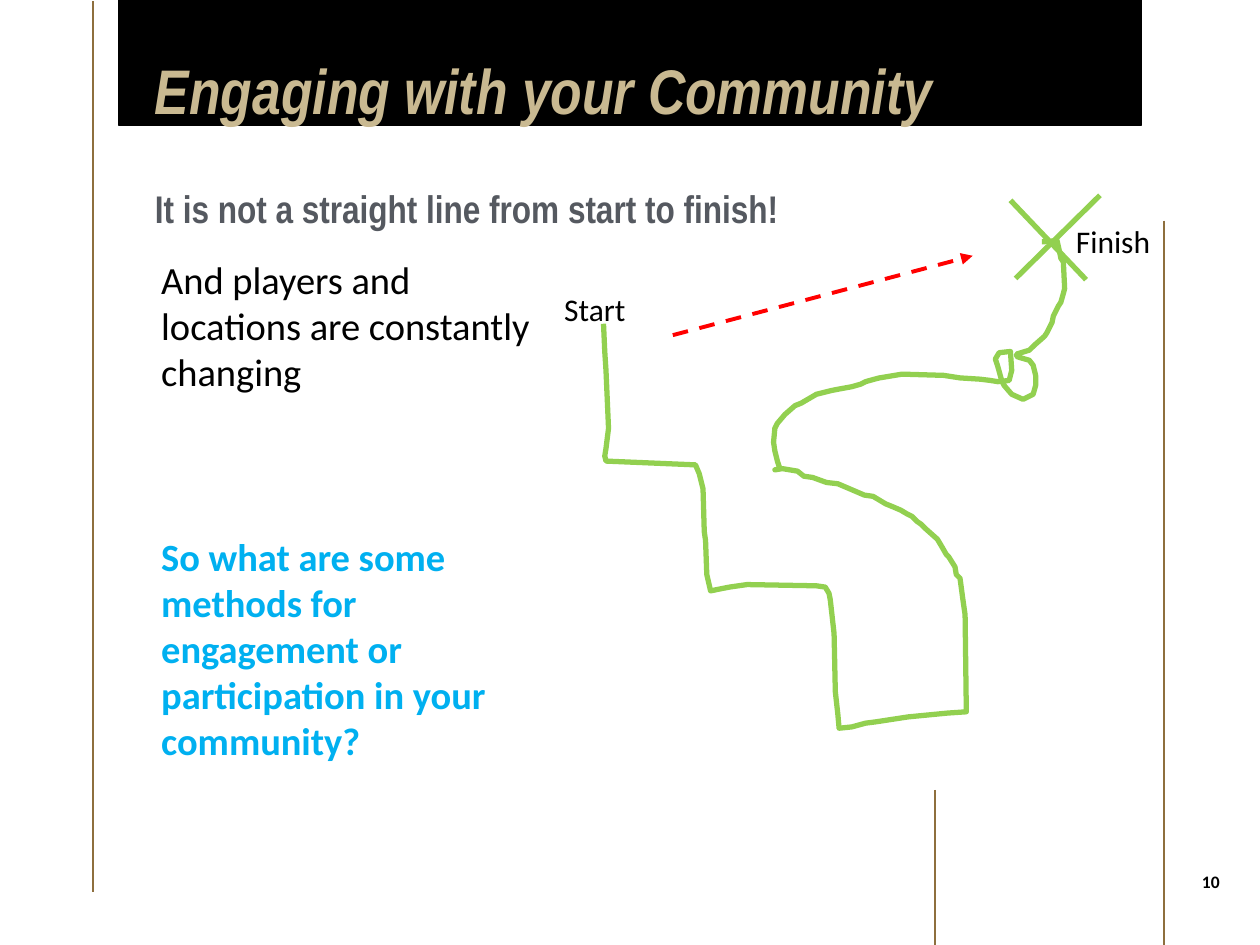
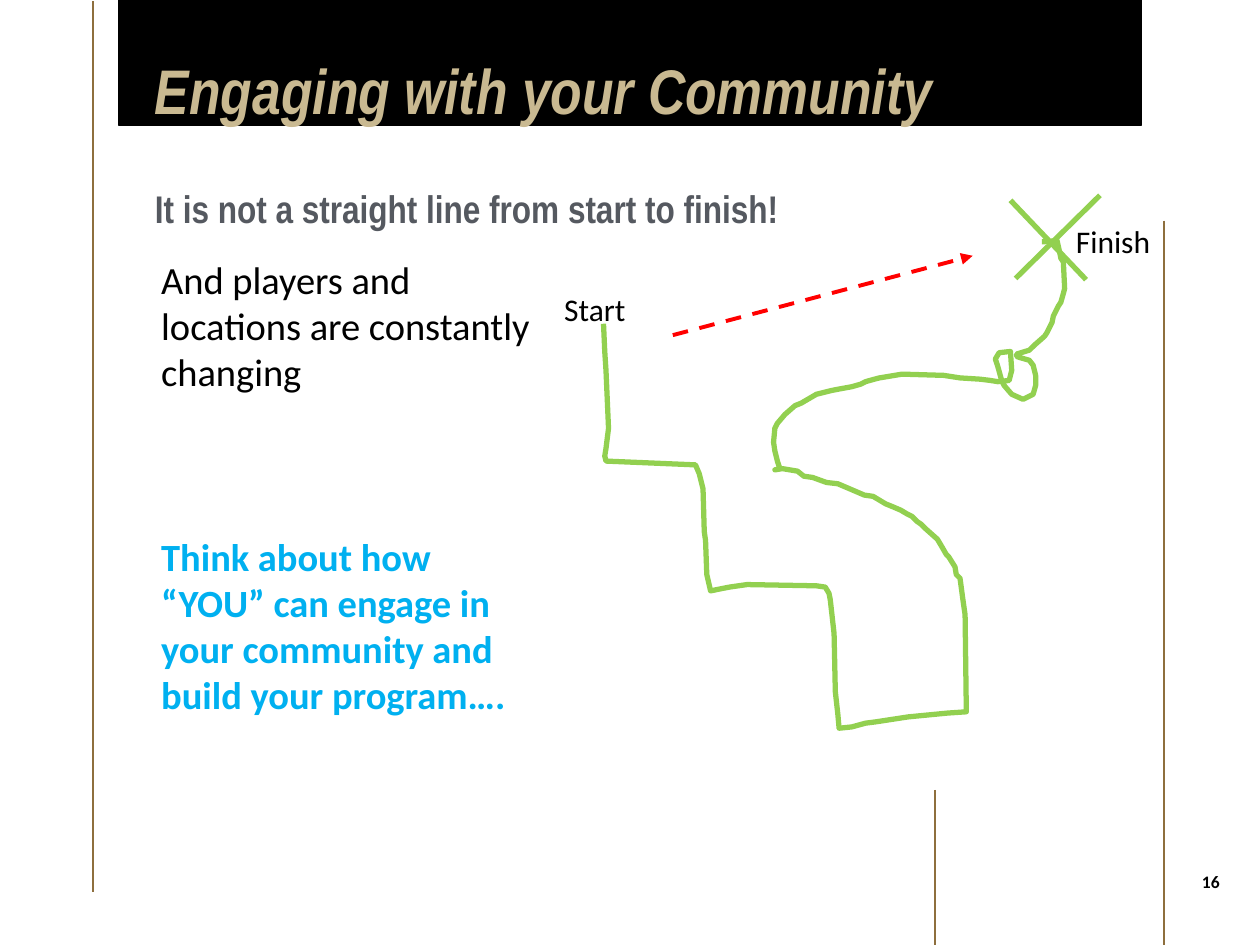
from pptx import Presentation
from pptx.dml.color import RGBColor
from pptx.enum.dml import MSO_LINE
from pptx.enum.shapes import MSO_CONNECTOR, MSO_SHAPE
from pptx.enum.text import MSO_ANCHOR, MSO_AUTO_SIZE, PP_ALIGN
from pptx.oxml.ns import qn
from pptx.util import Inches, Pt
from lxml import etree

STRAIGHT = MSO_CONNECTOR.STRAIGHT
RECTANGLE, ELLIPSE = MSO_SHAPE.RECTANGLE, MSO_SHAPE.OVAL
DASH = MSO_LINE.DASH
TOP, MIDDLE = MSO_ANCHOR.TOP, MSO_ANCHOR.MIDDLE
LEFT, CENTER = PP_ALIGN.LEFT, PP_ALIGN.CENTER
NO_AUTOFIT = MSO_AUTO_SIZE.NONE

BLACK = RGBColor(0x00, 0x00, 0x00)
BRONZE = RGBColor(0x8E, 0x6F, 0x3E)
GOLD = RGBColor(0xC9, 0xB9, 0x91)
SLATE = RGBColor(0x55, 0x59, 0x60)
BLUE = RGBColor(0x00, 0xB0, 0xF0)
GREEN = RGBColor(0x92, 0xD0, 0x50)
RED = RGBColor(0xFF, 0x00, 0x00)

TITLE_FORMAT = {"name": "Arial Narrow", "size": Pt(36), "bold": True, "italic": True, "color": GOLD}
SUBTITLE_FORMAT = {"name": "Arial Narrow", "size": Pt(22), "bold": True, "color": SLATE}
BODY_FORMAT = {"name": "Calibri", "size": Pt(22), "color": BLACK}
PROMPT_FORMAT = {**BODY_FORMAT, "bold": True, "color": BLUE}
LABEL_FORMAT = {**BODY_FORMAT, "size": Pt(18)}
NUMBER_FORMAT = {**BODY_FORMAT, "size": Pt(10), "bold": True}

TITLE = "Engaging with your Community"
SUBTITLE = "It is not a straight line from start to finish!"
STATEMENT = "And players and locations are constantly changing"
SLIDES = [
    ("10", "So what are some methods for engagement or participation in your community?"),
    ("16", "Think about how “YOU” can engage in your community and build your program…."),
]

# Frame lines as (x, y) to (x, y) in inches
FRAME_LINES = [
    ((9.24, 1.75), (9.24, 7.5)),
    ((0.74, 0.01), (0.74, 7.08)),
    ((7.42, 6.27), (7.42, 7.5)),
]

# Winding route in hundredths of an inch
ROUTE_POINTS = [
    # Steps down from the start
    (0, 67), (1, 89), (2, 104), (4, 150), (2, 166), (1, 172), (2, 176), (73, 179),
    (76, 186), (79, 198), (80, 232), (81, 239), (82, 266), (85, 279), (95, 277),
    (100, 276), (114, 274), (169, 275), (176, 276), (179, 281), (180, 286),
    (183, 313), (184, 359), (186, 377), (187, 388), (197, 387), (208, 384),
    (216, 383), (242, 379), (273, 376), (288, 375),
    # Back up and to the left
    (287, 298), (285, 284), (283, 269), (280, 266), (279, 260), (274, 252),
    (272, 250), (268, 243), (265, 238), (256, 230), (252, 226), (249, 224),
    (245, 220), (241, 218), (236, 215), (229, 212), (224, 210), (214, 204),
    (207, 203), (186, 194), (177, 193), (166, 189), (159, 188), (154, 184),
    (142, 182), (136, 183), (140, 182),
    # Bend to the right
    (138, 176), (136, 168), (135, 161), (136, 150), (138, 146), (144, 139),
    (152, 132), (157, 130), (169, 123), (181, 120), (186, 119), (197, 117),
    (204, 115), (208, 113), (215, 111), (219, 110), (237, 107), (270, 108),
    (283, 110), (299, 111), (307, 112), (313, 113), (322, 112),
    # Loop
    (323, 108), (324, 104), (323, 89), (314, 90), (311, 95), (313, 101),
    (316, 112), (318, 116), (324, 123), (333, 127), (341, 123), (343, 116),
    (343, 108), (341, 100), (338, 96), (331, 94), (328, 93), (328, 91),
    # Rise to the finish
    (338, 88), (342, 84), (350, 77), (352, 74), (356, 66), (357, 61), (359, 57),
    (361, 53), (363, 50), (365, 43), (366, 39), (365, 18), (363, 15), (362, 10),
    (360, 1), (349, 2), (348, 2),
]


def apply_font(font, text_format):
    for attribute, value in text_format.items():
        if attribute == "color":
            font.color.rgb = value
        else:
            setattr(font, attribute, value)


def fill_text(shape, paragraphs, inset=(0, 0), anchor=TOP, alignment=LEFT):
    """Write (text, format) pairs as paragraphs; inset is (horizontal, vertical)."""
    frame = shape.text_frame
    horizontal, vertical = (Inches(value) for value in inset)
    settings = {
        "word_wrap": True, "auto_size": NO_AUTOFIT, "vertical_anchor": anchor,
        "margin_left": horizontal, "margin_right": horizontal,
        "margin_top": vertical, "margin_bottom": vertical,
    }
    for attribute, value in settings.items():
        setattr(frame, attribute, value)
    for index, (text, text_format) in enumerate(paragraphs):
        paragraph = frame.add_paragraph() if index else frame.paragraphs[0]
        paragraph.alignment = alignment
        run = paragraph.add_run()
        run.text = text
        apply_font(run.font, text_format)
    return frame


def add_text(slide, box, paragraphs, **options):
    shape = slide.shapes.add_textbox(*(Inches(value) for value in box))
    return fill_text(shape, paragraphs, **options)


def add_line(slide, start, end, color, width):
    line = slide.shapes.add_connector(STRAIGHT, *(Inches(value) for value in (*start, *end)))
    line.line.color.rgb = color
    line.line.width = Pt(width)
    etree.SubElement(line.element.spPr, qn("a:effectLst"))
    return line


def add_frame(slide, band_box):
    band = slide.shapes.add_shape(RECTANGLE, *(Inches(value) for value in band_box))
    band.shadow.inherit = False
    band.fill.solid()
    band.fill.fore_color.rgb = BLACK
    band.line.color.rgb = BLACK
    band.line.width = Pt(1)
    slide.shapes.title.element.addprevious(band.element)
    for start, end in FRAME_LINES:
        add_line(slide, start, end, BRONZE, 1)


def add_headings(slide, box):
    left, top, width, height = box
    title = slide.shapes.title
    for attribute, value in zip(("left", "top", "width", "height"), box):
        setattr(title, attribute, Inches(value))
    frame = fill_text(title, [(TITLE, TITLE_FORMAT)])
    frame.paragraphs[0].line_spacing = 0.9
    add_text(slide, (left, top + 0.99, width, 0.37), [(SUBTITLE, SUBTITLE_FORMAT)])


def add_body(slide, box, prompt):
    frame = add_text(slide, box, [(STATEMENT, BODY_FORMAT), (prompt, PROMPT_FORMAT)])
    frame.paragraphs[1].space_before = Pt(79)


def add_slide_number(slide, box, number):
    badge = slide.shapes.add_shape(ELLIPSE, *(Inches(value) for value in box))
    badge.shadow.inherit = False
    badge.fill.background()
    badge.line.fill.background()
    fill_text(badge, [(number, NUMBER_FORMAT)], (0.02, 0.05), MIDDLE, CENTER)


def add_route_map(slide, left, top):
    """Draw the winding route, its finish cross, labels and the direct arrow."""
    def place(x, y):
        return left + x, top + y

    add_line(slide, place(4.35, 0), place(3.68, 0.66), GREEN, 3)

    builder = slide.shapes.build_freeform(*ROUTE_POINTS[0], scale=Inches(0.01))
    builder.add_line_segments(ROUTE_POINTS[1:], close=False)
    route = builder.convert_to_shape(*(Inches(value) for value in place(0.41, 0.35)))
    route.shadow.inherit = False
    route.fill.background()
    route.line.color.rgb = GREEN
    route.line.width = Pt(3)

    add_line(slide, place(3.64, 0.04), place(4.24, 0.67), GREEN, 3)
    for label, x, y, width in (("Start", 0, 0.7, 1.27), ("Finish", 4.06, 0.16, 0.91)):
        add_text(slide, (*place(x, y), width, 0.4), [(label, LABEL_FORMAT)], inset=(0.1, 0.05))

    arrow = add_line(slide, place(0.96, 1.11), place(3.34, 0.48), RED, 2.25)
    arrow.line.dash_style = DASH
    etree.SubElement(arrow.line._get_or_add_ln(), qn("a:tailEnd"), type="triangle")


def add_community_slide(presentation, number, prompt):
    slide = presentation.slides.add_slide(presentation.slide_layouts[5])
    add_frame(slide, (0.94, 0, 8.12, 0.99))
    add_headings(slide, (1.23, 0.48, 7.57, 0.56))
    add_body(slide, (1.28, 2.03, 2.96, 4.77), prompt)
    add_slide_number(slide, (9.41, 6.8, 0.4, 0.4), number)
    add_route_map(slide, 4.38, 1.55)


def main():
    presentation = Presentation()
    presentation.slide_width = Inches(10)
    presentation.slide_height = Inches(7.5)
    for number, prompt in SLIDES:
        add_community_slide(presentation, number, prompt)
    presentation.save("out.pptx")


if __name__ == "__main__":
    main()
